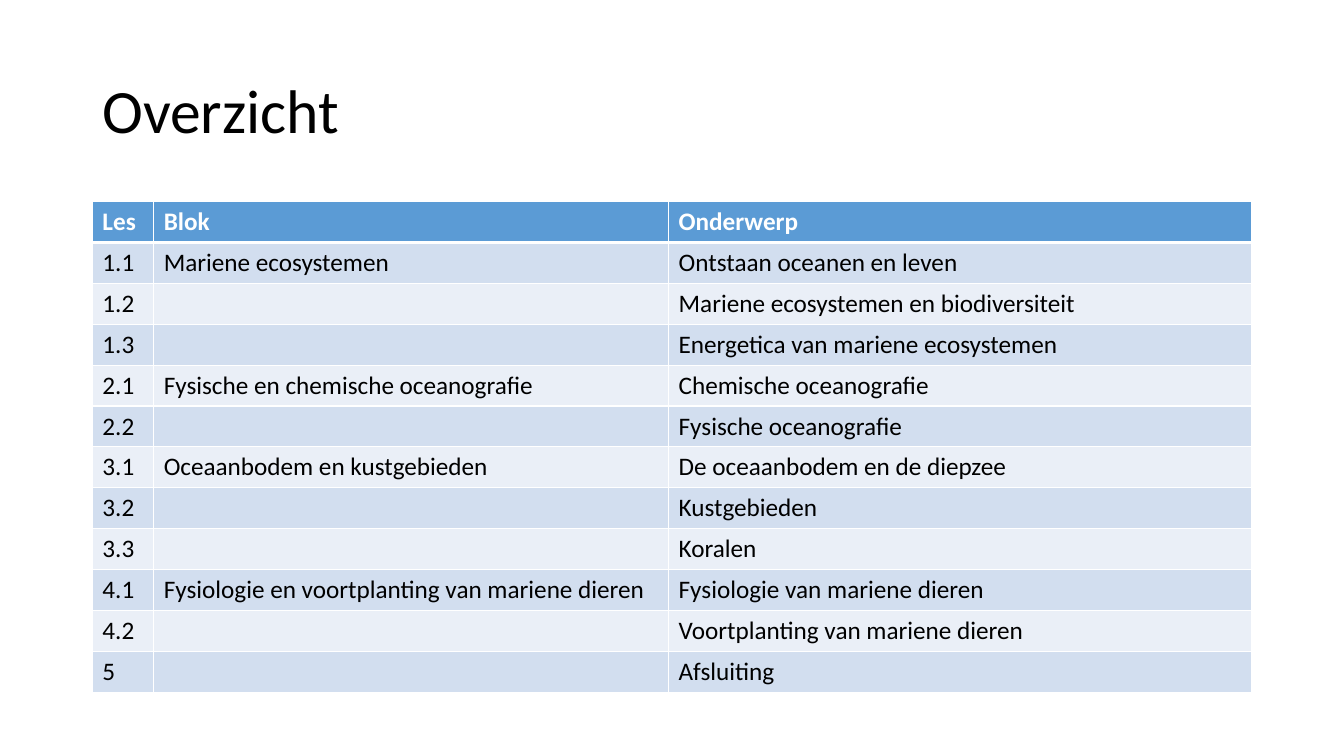
"""Builds the course overview slide: a title above a table of lessons."""
from typing import NamedTuple

from lxml.etree import SubElement
from pptx import Presentation
from pptx.dml.color import RGBColor
from pptx.enum.text import MSO_ANCHOR as Anchor
from pptx.oxml.ns import qn
from pptx.slide import Slide
from pptx.table import _Cell as Cell
from pptx.text.text import TextFrame
from pptx.util import Inches, Length, Pt

FONT = "Calibri"
BLACK = RGBColor(0x00, 0x00, 0x00)
WHITE = RGBColor(0xFF, 0xFF, 0xFF)
BLUE = RGBColor(0x5B, 0x9B, 0xD5)
BAND_DARK = RGBColor(0xD2, 0xDE, 0xEF)
BAND_LIGHT = RGBColor(0xEA, 0xEF, 0xF7)

GRID_COLS, GRID_ROWS = 160, 90
SLIDE_W, SLIDE_H = Inches(13.333), Inches(7.5)
LEFT, WIDTH = 11, 138
TITLE_TOP, TITLE_HEIGHT = 4.8, 17.4
TABLE_TOP, ROW_HEIGHT = 24, 4.87
COLUMN_WIDTHS = (7.3, 61.3, 69.4)


class Lesson(NamedTuple):
    number: str
    block: str
    topic: str


HEADER = Lesson("Les", "Blok", "Onderwerp")
LESSONS = (
    Lesson("1.1", "Mariene ecosystemen", "Ontstaan oceanen en leven"),
    Lesson("1.2", "", "Mariene ecosystemen en biodiversiteit"),
    Lesson("1.3", "", "Energetica van mariene ecosystemen"),
    Lesson("2.1", "Fysische en chemische oceanografie", "Chemische oceanografie"),
    Lesson("2.2", "", "Fysische oceanografie"),
    Lesson("3.1", "Oceaanbodem en kustgebieden", "De oceaanbodem en de diepzee"),
    Lesson("3.2", "", "Kustgebieden"),
    Lesson("3.3", "", "Koralen"),
    Lesson("4.1", "Fysiologie en voortplanting van mariene dieren",
           "Fysiologie van mariene dieren"),
    Lesson("4.2", "", "Voortplanting van mariene dieren"),
    Lesson("5", "", "Afsluiting"),
)


def cols(n: float) -> Length:
    return Length(round(SLIDE_W * n / GRID_COLS))


def rows(n: float) -> Length:
    return Length(round(SLIDE_H * n / GRID_ROWS))


def write(tf: TextFrame, text: str, *, size: float = 18, color: RGBColor = BLACK,
          bold: bool = False, spacing: float = 1.0) -> None:
    p = tf.paragraphs[0]
    p.line_spacing = spacing
    p.font.size = Pt(size)
    if text:
        r = p.add_run()
        r.text = text
        r.font.name, r.font.size, r.font.bold = FONT, Pt(size), bold
        r.font.color.rgb = color


def add_borders(cell: Cell, **widths: float) -> None:
    tc_pr = cell._tc.get_or_add_tcPr()
    for side, width in widths.items():
        ln = SubElement(tc_pr, qn(f"a:ln{side}"), w=str(Pt(width)))
        fill = SubElement(ln, qn("a:solidFill"))
        SubElement(fill, qn("a:srgbClr"), val=str(WHITE))


def add_title(s: Slide, text: str) -> None:
    sp = s.shapes.add_textbox(cols(LEFT), rows(TITLE_TOP), cols(WIDTH), rows(TITLE_HEIGHT))
    tf = sp.text_frame
    tf.word_wrap = True
    tf.vertical_anchor = Anchor.MIDDLE
    write(tf, text, size=44, spacing=0.9)


def add_lesson_table(s: Slide) -> None:
    lines = (HEADER, *LESSONS)
    table = s.shapes.add_table(
        len(lines), len(COLUMN_WIDTHS), cols(LEFT), rows(TABLE_TOP),
        cols(WIDTH), rows(ROW_HEIGHT * len(lines))).table
    for column, width in zip(table.columns, COLUMN_WIDTHS):
        column.width = cols(width)
    for i, (row, lesson) in enumerate(zip(table.rows, lines)):
        row.height = rows(ROW_HEIGHT)
        is_header = i == 0
        band = BLUE if is_header else BAND_DARK if i % 2 else BAND_LIGHT
        for cell, text in zip(row.cells, lesson):
            add_borders(cell, L=1, R=1, T=3 if i == 1 else 1, B=3 if is_header else 1)
            cell.fill.solid()
            cell.fill.fore_color.rgb = band
            write(cell.text_frame, text, color=WHITE if is_header else BLACK, bold=is_header)


def main() -> None:
    prs = Presentation()
    prs.slide_width, prs.slide_height = SLIDE_W, SLIDE_H
    s = prs.slides.add_slide(prs.slide_layouts[6])
    add_title(s, "Overzicht")
    add_lesson_table(s)
    prs.save("out.pptx")


if __name__ == "__main__":
    main()
